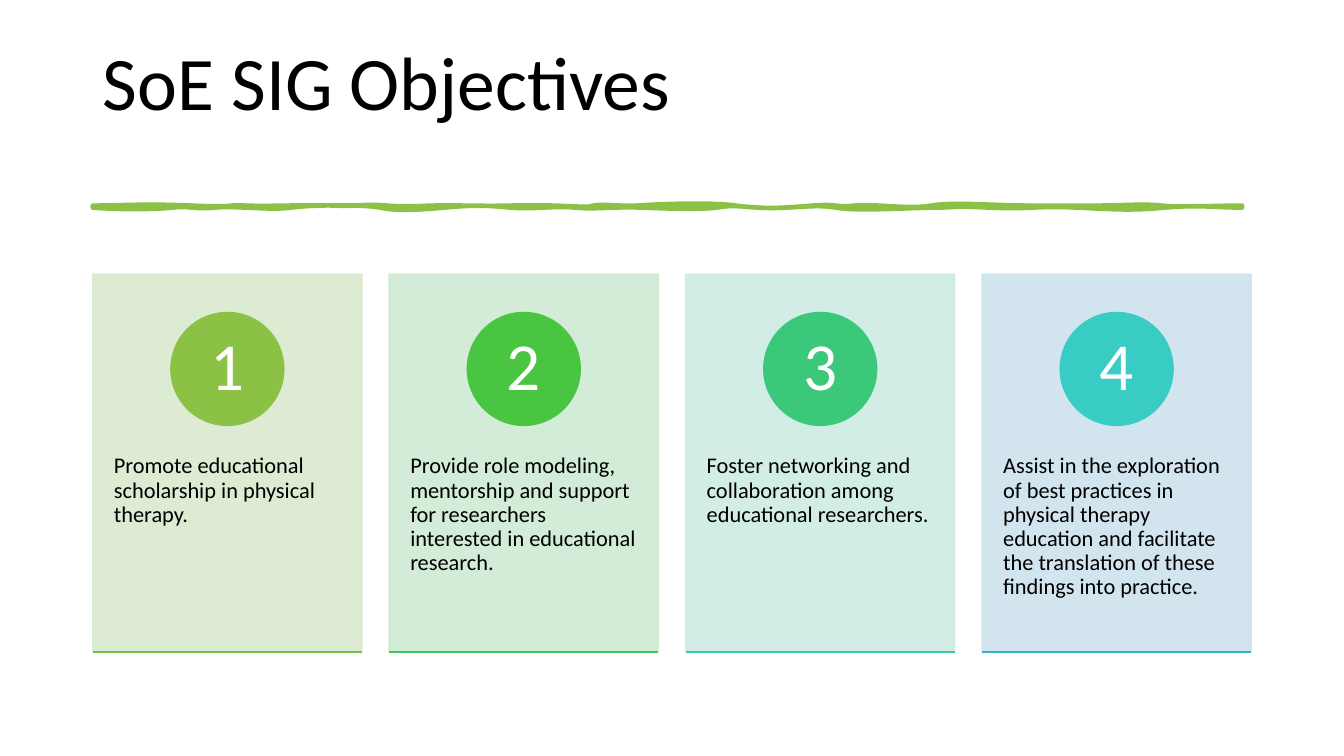
from lxml import etree
from pptx import Presentation
from pptx import util as u
from pptx.dml.color import RGBColor
from pptx.enum import shapes, text
from pptx.oxml import ns

TITLE = "SoE SIG Objectives"
# text, panel colour, circle colour, base line colour
OBJECTIVES = [
    ("Promote educational scholarship in physical therapy.",
     "DAE9CF", "8BC145", "6BC343"),
    ("Provide role modeling, mentorship and support for researchers "
     "interested in educational research.",
     "CFEAD3", "49C541", "3FC759"),
    ("Foster networking and collaboration among educational researchers.",
     "CEECE4", "3CC87B", "3ACA9F"),
    ("Assist in the exploration of best practices in physical therapy "
     "education and facilitate the translation of these findings into practice.",
     "CEE3ED", "38CCC5", "36AFCE"),
]
BRUSH_COLOUR = "8BC145"
BRUSH_START = (0.92, 2.04)
# Each curve: two control points and an end point
BRUSH_CURVES = [
    (1.19, 2.04, 1.44, 2.02, 1.9, 2.04), (2.37, 2.06, 2.2, 2.03, 2.44, 2.04),
    (2.67, 2.05, 3.03, 2.03, 3.31, 2.04), (3.6, 2.05, 3.59, 2.02, 3.84, 2.04),
    (4.1, 2.06, 4.23, 2.03, 4.6, 2.04), (4.98, 2.05, 5.14, 2.03, 5.48, 2.04),
    (5.81, 2.05, 5.81, 2.06, 5.89, 2.04), (5.98, 2.02, 6.15, 2.05, 6.31, 2.04),
    (6.47, 2.03, 7.01, 2, 7.3, 2.04), (7.59, 2.08, 7.81, 2.06, 8.06, 2.04),
    (8.31, 2.02, 8.27, 2.06, 8.48, 2.04), (8.68, 2.02, 9.01, 2.08, 9.24, 2.04),
    (9.47, 2, 9.82, 2.04, 10.23, 2.04), (10.63, 2.04, 10.63, 2.04, 10.87, 2.04),
    (11.12, 2.04, 11.36, 2.02, 11.52, 2.04), (11.68, 2.06, 12.03, 2.04, 12.32, 2.04),
    (12.32, 2.05, 12.32, 2.05, 12.32, 2.06), (12.05, 2.06, 11.89, 2.03, 11.56, 2.06),
    (11.22, 2.09, 11.1, 2.08, 10.68, 2.06), (10.27, 2.04, 10.23, 2.08, 9.81, 2.06),
    (9.39, 2.04, 9.52, 2.06, 9.28, 2.06), (9.04, 2.06, 8.51, 2.1, 8.29, 2.06),
    (8.06, 2.02, 7.82, 2.08, 7.53, 2.06), (7.24, 2.04, 7.25, 2.04, 7.11, 2.06),
    (6.98, 2.08, 6.61, 2.07, 6.35, 2.06), (6.09, 2.05, 5.9, 2.08, 5.7, 2.06),
    (5.51, 2.04, 5.28, 2.08, 5.06, 2.06), (4.83, 2.04, 4.73, 2.03, 4.41, 2.06),
    (4.09, 2.09, 3.9, 2.09, 3.77, 2.06), (3.63, 2.03, 3.1, 2.03, 2.89, 2.06),
    (2.68, 2.09, 2.35, 2.04, 2.13, 2.06), (1.92, 2.08, 1.89, 2.04, 1.71, 2.06),
    (1.54, 2.08, 1.14, 2.08, 0.92, 2.06),
]

LEFT, PANEL_TOP, PANEL_WIDTH, PANEL_HEIGHT = 0.92, 2.72, 2.67, 3.74
PITCH = 2.94
CIRCLE_TOP, CIRCLE_SIZE, NUMBER_SIZE = 3.1, 1.12, 0.79
BODY_TOP, BODY_HEIGHT = 4.15, 2.25
BASE_TOP = 6.47


def colour(value):
    return RGBColor.from_string(value)


def inches(*lengths):
    return [u.Inches(length) for length in lengths]


def write(shape, content, size, font_colour, align, anchor, insets):
    frame = shape.text_frame
    frame.text = content
    horizontal, vertical = inches(*insets)
    frame_format = {
        "word_wrap": True, "auto_size": text.MSO_AUTO_SIZE.NONE,
        "vertical_anchor": anchor,
        "margin_left": horizontal, "margin_right": horizontal,
        "margin_top": vertical, "margin_bottom": vertical,
    }
    for name, value in frame_format.items():
        setattr(frame, name, value)
    paragraph = frame.paragraphs[0]
    paragraph.alignment = align
    paragraph.line_spacing = 0.9
    for name, value in {"name": "Calibri", "size": u.Pt(size)}.items():
        setattr(paragraph.font, name, value)
    paragraph.font.color.rgb = colour(font_colour)


def paint(shape, value, line_width=1):
    shape.shadow.inherit = False
    shape.fill.solid()
    shape.fill.fore_color.rgb = colour(value)
    shape.line.color.rgb = colour(value)
    shape.line.width = u.Pt(line_width)


def set_opacity(shape, percent):
    """Make the fill and the line of a painted shape partly transparent."""
    for element in shape._element.spPr.iter(ns.qn("a:srgbClr")):
        etree.SubElement(element, ns.qn("a:alpha"), val=str(percent * 1000))


def bend(freeform):
    """Turn every three straight segments into one cubic curve."""
    segments = list(freeform._element.iter(ns.qn("a:lnTo")))
    for first in range(0, len(segments), 3):
        curve = etree.Element(ns.qn("a:cubicBezTo"))
        segments[first].addprevious(curve)
        for segment in segments[first:first + 3]:
            curve.append(segment[0])
            segment.getparent().remove(segment)


def add_brush_stroke(slide):
    points = [inches(*curve[i:i + 2]) for curve in BRUSH_CURVES for i in (0, 2, 4)]
    builder = slide.shapes.build_freeform(*inches(*BRUSH_START))
    builder.add_line_segments(points, close=True)
    stroke = builder.convert_to_shape()
    bend(stroke)
    paint(stroke, BRUSH_COLOUR, 3.25)
    etree.SubElement(stroke._element.spPr.find(ns.qn("a:ln")), ns.qn("a:round"))


def add_objective(slide, index, content, panel_colour, circle_colour, base_colour):
    left = LEFT + index * PITCH
    panel = slide.shapes.add_shape(
        shapes.MSO_SHAPE.RECTANGLE, *inches(left, PANEL_TOP, PANEL_WIDTH, PANEL_HEIGHT))
    paint(panel, panel_colour)
    set_opacity(panel, 90)

    body = slide.shapes.add_textbox(*inches(left, BODY_TOP, PANEL_WIDTH, BODY_HEIGHT))
    write(body, content, 16, "000000", text.PP_ALIGN.LEFT, text.MSO_ANCHOR.TOP,
          (0.21, 0.36))

    circle_left = left + (PANEL_WIDTH - CIRCLE_SIZE) / 2
    circle = slide.shapes.add_shape(
        shapes.MSO_SHAPE.OVAL, *inches(circle_left, CIRCLE_TOP, CIRCLE_SIZE, CIRCLE_SIZE))
    paint(circle, circle_colour)

    margin = (CIRCLE_SIZE - NUMBER_SIZE) / 2
    number = slide.shapes.add_textbox(
        *inches(circle_left + margin, CIRCLE_TOP + margin, NUMBER_SIZE, NUMBER_SIZE))
    write(number, str(index + 1), 48, "FFFFFF", text.PP_ALIGN.CENTER,
          text.MSO_ANCHOR.MIDDLE, (0.09, 0.01))

    base = slide.shapes.add_connector(
        shapes.MSO_CONNECTOR.STRAIGHT,
        *inches(left, BASE_TOP, left + PANEL_WIDTH, BASE_TOP))
    base.line.color.rgb = colour(base_colour)
    base.line.width = u.Pt(1)
    etree.SubElement(base._element.spPr, ns.qn("a:effectLst"))


def main():
    presentation = Presentation()
    presentation.slide_width, presentation.slide_height = inches(13.33, 7.5)
    slide = presentation.slides.add_slide(presentation.slide_layouts[5])
    title = slide.shapes.title
    title.left, title.top, title.width, title.height = inches(0.92, 0.4, 11.5, 1.45)
    write(title, TITLE, 54, "000000", text.PP_ALIGN.LEFT, text.MSO_ANCHOR.TOP,
          (0.1, 0.05))
    add_brush_stroke(slide)
    for index, objective in enumerate(OBJECTIVES):
        add_objective(slide, index, *objective)
    presentation.save("out.pptx")


if __name__ == "__main__":
    main()
